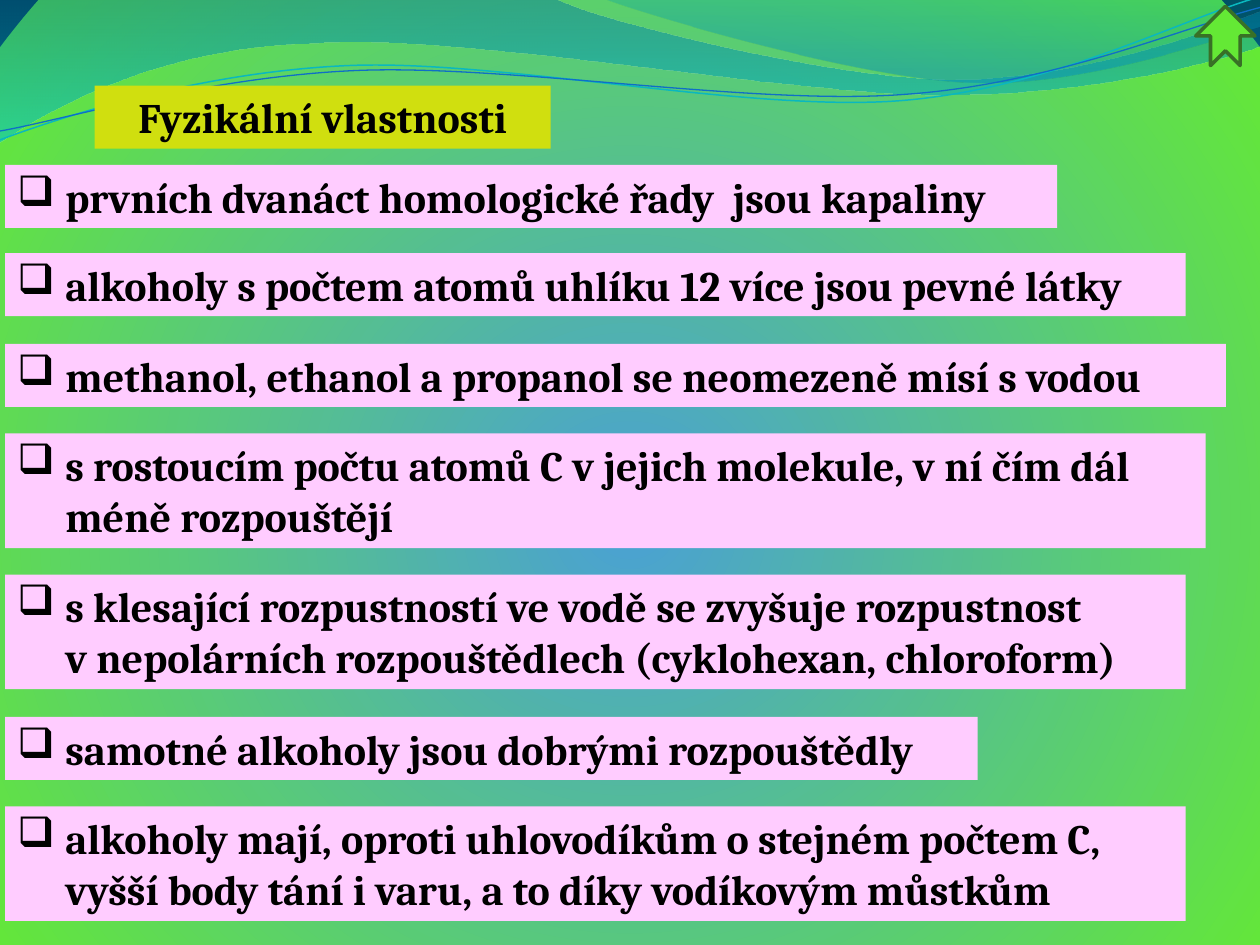
import math
import pptx
import pptx.util
import pptx.dml.color
import pptx.enum.shapes
import pptx.enum.text
import pptx.oxml
import pptx.oxml.ns
from dataclasses import dataclass

Inches = pptx.util.Inches
qn = pptx.oxml.ns.qn
NS = pptx.oxml.ns.nsdecls("a")


@dataclass(frozen=True)
class Theme:
    font: str = "Cambria"
    size: int = 24
    ink: str = "000000"
    title: str = "D0DF0F"
    item: str = "FFCCFF"
    arrow: str = "64E935"
    edge: str = "387026"
    glow: tuple = ((0, "4AA0D5", 100), (100, "64E935", 100),
                   (100, "003048", 100))
    wave: tuple = ((0, "0074A1", 45), (100, "00C6CF", 55))
    crest: tuple = ((0, "00A1A9", 30), (80, "008BBF", 45))
    teal: str = "0AB8BF"
    blue: str = "0F6FC6"


THEME = Theme()
TILT = 2.7  # degrees by which the two thin lines are turned left

# Each wave: start point, then straight (2 numbers) or curved (6 numbers) steps
WAVE = [(0, 0), (4.4, -0.01), (4.76, 0.17, 6.64, 0.63, 7.58, 0.63),
        (8.53, 0.63, 9.58, 0.26, 10, 0.09), (10.01, 0.36),
        (9.83, 0.44, 8.7, 0.76, 7.46, 0.75),
        (6.22, 0.75, 3.82, 0.28, 2.57, 0.34),
        (1.29, 0.36, 0.46, 0.83, -0.01, 1.13), (0, 0)]
CREST = [(4.79, -0.01), (5.09, 0.11, 6.82, 0.62, 7.69, 0.65),
         (8.56, 0.69, 9.61, 0.32, 10, 0.21), (10, 0), (4.79, -0.01)]
TEAL = [(0, 1.11), (0.48, 0.93, 1.58, 0.57, 2.77, 0.52),
        (3.95, 0.47, 5.93, 0.89, 7.13, 0.8),
        (8.33, 0.71, 9.38, 0.15, 9.98, -0.02)]
BLUE = [(0, 1.04), (0.47, 0.96, 1.64, 0.61, 2.83, 0.56),
        (4.03, 0.51, 5.97, 0.84, 7.17, 0.75),
        (8.36, 0.67, 9.41, 0.21, 10, 0.06)]

# Top, width, height and text of each item
ITEMS = [
    (2.01, 9.37, 0.5, "alkoholy s počtem atomů uhlíku 12 více jsou pevné látky"),
    (1.31, 8.35, 0.5, "prvních dvanáct homologické řady  jsou kapaliny"),
    (2.73, 9.69, 0.5, "methanol, ethanol a propanol se neomezeně mísí s vodou"),
    (4.56, 9.37, 0.91, "s klesající rozpustností ve vodě se zvyšuje rozpustnost \n"
                       "v nepolárních rozpouštědlech (cyklohexan, chloroform)"),
    (5.69, 7.72, 0.5, "samotné alkoholy jsou dobrými rozpouštědly"),
    (3.44, 9.53, 0.91, "s rostoucím počtu atomů C v jejich molekule, "
                       "v ní čím dál méně rozpouštějí"),
    (6.4, 9.37, 0.91, "alkoholy mají, oproti uhlovodíkům o stejném počtem C, "
                      "vyšší body tání i varu, a to díky vodíkovým můstkům"),
]


def rgb(code):
    return pptx.dml.color.RGBColor.from_string(code)


def paint(fill, code):
    fill.solid()
    fill.fore_color.rgb = rgb(code)


def blend(fill, root, stops, way):
    """Fill with colour stops (place, colour, opacity) and a direction element."""
    fill.gradient()
    grad = next(root.iter(qn("a:gradFill")))
    for part in list(grad):
        grad.remove(part)
    marks = "".join(
        f'<a:gs pos="{pos * 1000}"><a:srgbClr val="{code}">'
        f'<a:alpha val="{alpha * 1000}"/></a:srgbClr></a:gs>'
        for pos, code, alpha in stops)
    for xml in (f"<a:gsLst {NS}>{marks}</a:gsLst>", way):
        grad.append(pptx.oxml.parse_xml(xml))


def turn(point, mid, angle):
    """Turn a point clockwise around mid."""
    dx, dy = point[0] - mid[0], point[1] - mid[1]
    cos, sin = math.cos(math.radians(angle)), math.sin(math.radians(angle))
    return mid[0] + dx * cos - dy * sin, mid[1] + dx * sin + dy * cos


def bend(shape, steps):
    """Merge the three segments of each curved step into one cubic curve."""
    lines = iter(list(shape.element.iter(qn("a:lnTo"))))
    for step in steps[1:]:
        line = next(lines)
        if len(step) == 2:
            continue
        curve = pptx.oxml.parse_xml(f"<a:cubicBezTo {NS}/>")
        line.addprevious(curve)
        for part in (line, next(lines), next(lines)):
            curve.append(part[0])
            part.getparent().remove(part)


def add_wave(slide, steps, stops=None, line=None, width=1, mid=None):
    points = [step[i:i + 2] for step in steps for i in range(0, len(step), 2)]
    if mid:
        points = [turn(point, mid, TILT) for point in points]
    first, *rest = [(Inches(x), Inches(y)) for x, y in points]
    pen = slide.shapes.build_freeform(*first)
    pen.add_line_segments(rest, close=bool(stops))
    shape = pen.convert_to_shape()
    bend(shape, steps)
    shape.shadow.inherit = False
    if mid:
        shape.rotation = 360 - TILT
    if stops:
        blend(shape.fill, shape.element, stops, f'<a:lin {NS} ang="5400000"/>')
        shape.line.fill.background()
    else:
        shape.fill.background()
        shape.line.color.rgb = rgb(line)
        shape.line.width = pptx.util.Pt(width)


def write(shape, text, align="LEFT", bullet=None, fit="SHAPE_TO_FIT_TEXT"):
    frame = shape.text_frame
    frame.word_wrap = True
    frame.auto_size = pptx.enum.text.MSO_AUTO_SIZE[fit]
    frame.vertical_anchor = pptx.enum.text.MSO_ANCHOR.TOP
    para = frame.paragraphs[0]
    para.text = text.replace("\n", "\v")
    para.alignment = pptx.enum.text.PP_ALIGN[align]
    if bullet:
        props = para._p.get_or_add_pPr()
        props.set("marL", str(Inches(0.38)))
        props.set("indent", str(-Inches(0.38)))
        for xml in (f'<a:buFont {NS} typeface="Wingdings" charset="2"/>',
                    f'<a:buChar {NS} char="{bullet}"/>'):
            props.append(pptx.oxml.parse_xml(xml))
    for run in para.runs:
        run.font.name = THEME.font
        run.font.size = pptx.util.Pt(THEME.size)
        run.font.bold = True
        run.font.color.rgb = rgb(THEME.ink)


def add_title(slide, text):
    title = slide.shapes.title
    title.left, title.top = Inches(0.75), Inches(0.68)
    title.width, title.height = Inches(3.62), Inches(0.5)
    paint(title.fill, THEME.title)
    write(title, text, align="CENTER", fit="NONE")
    title.element.getparent().append(title.element)  # in front of the waves


def add_item(slide, top, width, height, text):
    box = slide.shapes.add_textbox(Inches(0.04), Inches(top),
                                   Inches(width), Inches(height))
    paint(box.fill, THEME.item)
    write(box, text, bullet="q")  # hollow box in Wingdings


def add_arrow(slide):
    arrow = slide.shapes.add_shape(
        pptx.enum.shapes.MSO_SHAPE.NOTCHED_RIGHT_ARROW,
        Inches(9.49), Inches(0.05), Inches(0.47), Inches(0.47))
    arrow.rotation = 270
    arrow.shadow.inherit = False
    paint(arrow.fill, THEME.arrow)
    arrow.line.color.rgb = rgb(THEME.edge)
    arrow.line.width = pptx.util.Pt(2)


def main():
    deck = pptx.Presentation()
    deck.slide_width, deck.slide_height = Inches(10), Inches(7.5)
    slide = deck.slides.add_slide(deck.slide_layouts[5])

    # Background and waves
    blend(slide.background.fill, slide.element, THEME.glow,
          f'<a:path {NS} path="circle"><a:fillToRect l="10000" t="110000" '
          'r="10000" b="100000"/></a:path>')
    add_wave(slide, WAVE, stops=THEME.wave)
    add_wave(slide, CREST, stops=THEME.crest)
    add_wave(slide, TEAL, line=THEME.teal, width=0.85, mid=(4.99, 0.58))
    add_wave(slide, BLUE, line=THEME.blue, width=0.75, mid=(5, 0.59))

    # Title, items and arrow
    add_title(slide, "Fyzikální vlastnosti")
    for item in ITEMS:
        add_item(slide, *item)
    add_arrow(slide)
    deck.save("out.pptx")


if __name__ == "__main__":
    main()
